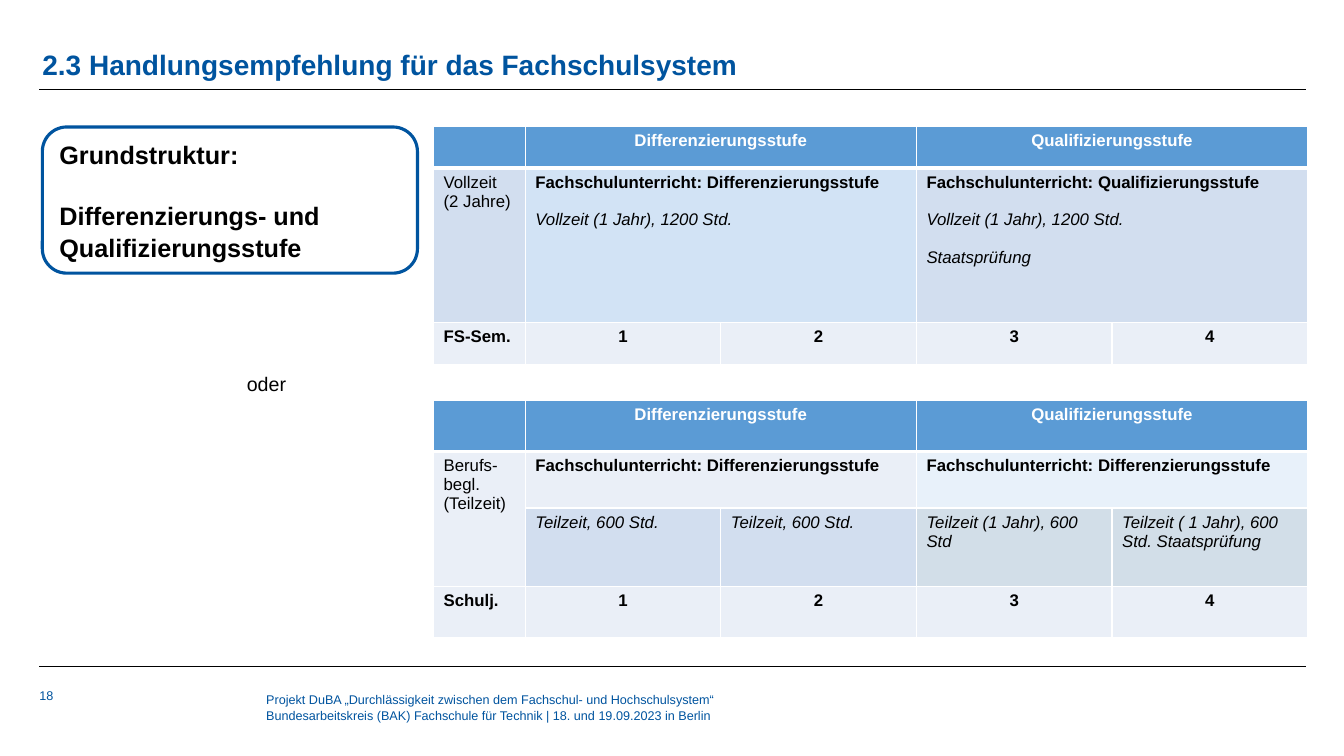
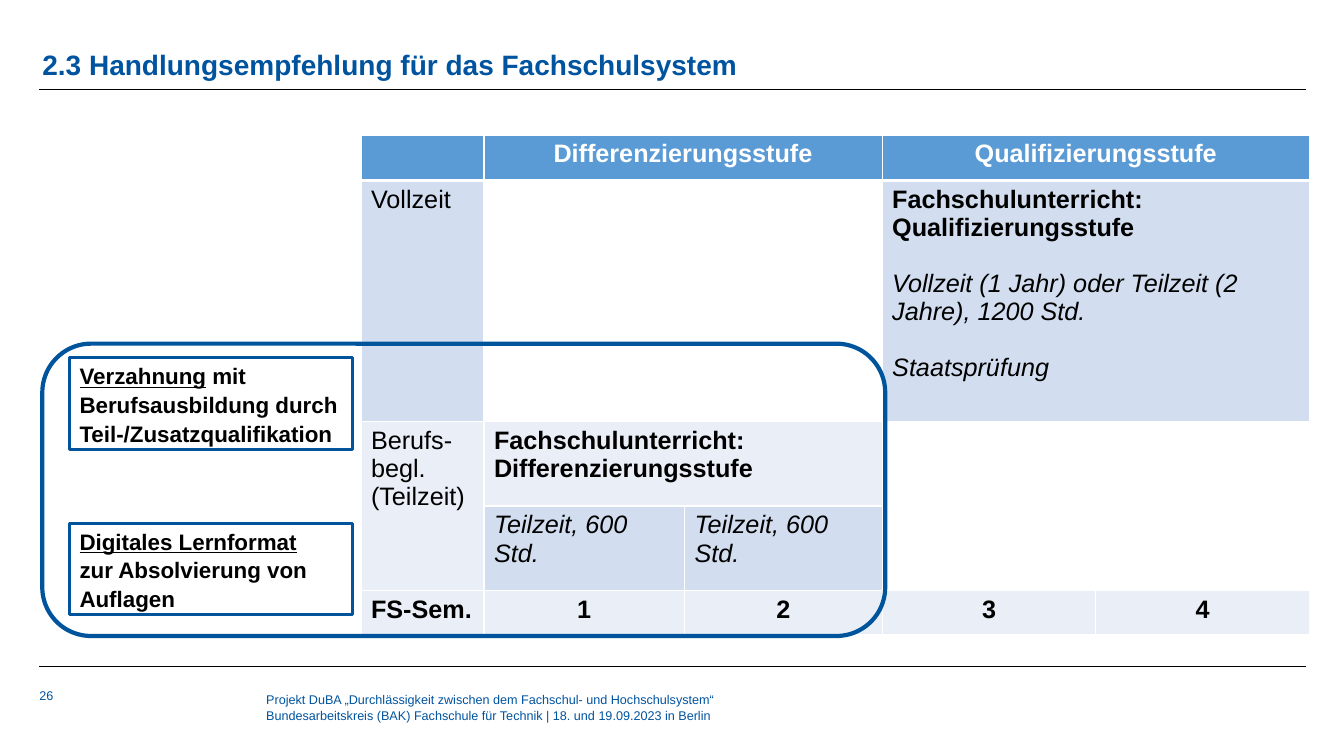
from dataclasses import dataclass

from lxml.etree import SubElement
from pptx import Presentation
from pptx.dml.color import RGBColor
from pptx.enum.shapes import MSO_CONNECTOR, MSO_SHAPE
from pptx.enum.text import MSO_ANCHOR, PP_ALIGN
from pptx.oxml.ns import qn
from pptx.util import Inches, Pt


@dataclass(frozen=True)
class Theme:
    font: str = "Arial"
    blue: str = "00549F"
    frame: str = "00549C"
    black: str = "000000"
    white: str = "FFFFFF"
    head: str = "5B9BD5"
    mid: str = "D2DEEF"
    sky: str = "D2E3F5"
    pale: str = "EAEFF7"
    ice: str = "E8F1FA"
    grey: str = "D2DEE8"
    title: int = 20
    large: int = 18
    note: int = 16
    body: int = 14
    small: int = 12
    foot: int = 9
    lead: float = 1.07
    gap: float = 1.1


@dataclass(frozen=True)
class Para:
    text: str
    bold: bool = False
    italic: bool = False
    gap: bool = False


@dataclass(frozen=True)
class Cell:
    row: int
    col: int
    paras: tuple
    fill: str
    rows: int = 1
    cols: int = 1
    color: str = "000000"
    align: PP_ALIGN = PP_ALIGN.LEFT


THEME = Theme()
TITLE = "2.3 Handlungsempfehlung für das Fachschulsystem"
FOOTER = ("Projekt DuBA „Durchlässigkeit zwischen dem Fachschul- und Hochschulsystem“ "
          "Bundesarbeitskreis (BAK) Fachschule für Technik | 18. und 19.09.2023 in Berlin")
STAGES = ("Differenzierungsstufe", "Qualifizierungsstufe")
PLAIN_STYLE = "{2D5ABB26-0587-4C30-8999-92F81FD0307C}"


def rgb(code):
    return RGBColor.from_string(code)


def style(para, size, color=THEME.black, bold=False, italic=False):
    font = para.font
    font.name, font.size = THEME.font, Pt(size)
    font.bold, font.italic = bold, italic
    font.color.rgb = rgb(color)


def fill_text(frame, paras, size, color=THEME.black, align=PP_ALIGN.LEFT, lead=None):
    for num, item in enumerate(paras):
        para = frame.add_paragraph() if num else frame.paragraphs[0]
        para.text, para.alignment = item.text, align
        if lead:
            para.line_spacing = lead
        if item.gap:
            para.space_before = Pt(round(size * THEME.gap, 1))
        style(para, size, color, item.bold, item.italic)


def add_text(slide, box, para, size, color=THEME.black, inset=True, lead=THEME.lead):
    frame = slide.shapes.add_textbox(*map(Inches, box)).text_frame
    frame.word_wrap = True
    if not inset:
        frame.margin_left = frame.margin_right = 0
        frame.margin_top = frame.margin_bottom = 0
    fill_text(frame, [para], size, color, lead=lead)
    return frame


def add_rule(slide, top):
    line = slide.shapes.add_connector(
        MSO_CONNECTOR.STRAIGHT, Inches(0.39), Inches(top), Inches(12.95), Inches(top))
    line.line.color.rgb = rgb(THEME.black)
    line.line.width = Pt(0.5)
    SubElement(line._element.spPr, qn("a:effectLst"))


def add_page(deck, number):
    """Add a slide with the shared title, rules and footer."""
    slide = deck.slides.add_slide(deck.slide_layouts[6])
    add_text(slide, (2.64, 6.85, 4.49, 0.61), Para(FOOTER), THEME.foot, THEME.blue, False)
    for top in (0.89, 6.61):
        add_rule(slide, top)
    add_text(slide, (0.39, 6.81, 0.8, 0.43), Para(str(number)), THEME.foot,
             THEME.blue, False)
    frame = add_text(slide, (0.42, 0.22, 12.56, 0.59), Para(TITLE, bold=True),
                     THEME.title, THEME.blue, False, 0.9)
    frame.vertical_anchor = MSO_ANCHOR.BOTTOM
    return slide


def add_frame(slide, box, kind, color, width):
    """Add an unfilled outline shape and return its text frame."""
    shape = slide.shapes.add_shape(kind, *map(Inches, box))
    shape.shadow.inherit = False
    shape.fill.background()
    shape.line.color.rgb = rgb(color)
    shape.line.width = Pt(width)
    shape.text_frame.word_wrap = True
    return shape.text_frame


def add_note(slide, box, lines):
    """Add a bordered note; each line is a list of (text, underlined) runs."""
    frame = add_frame(slide, box, MSO_SHAPE.RECTANGLE, THEME.frame, 2.25)
    for num, parts in enumerate(lines):
        para = frame.add_paragraph() if num else frame.paragraphs[0]
        para.alignment, para.line_spacing = PP_ALIGN.LEFT, THEME.lead
        style(para, THEME.note, bold=True)
        for text, under in parts:
            run = para.add_run()
            run.text, run.font.underline = text, under


def add_edges(cell, row):
    """Draw white borders, with a thick line below the head row."""
    thick = {0: "lnB", 1: "lnT"}.get(row)
    props = cell._tc.get_or_add_tcPr()
    for side in ("lnL", "lnR", "lnT", "lnB"):
        edge = SubElement(props, qn("a:" + side), w=str(Pt(3 if side == thick else 1)))
        paint = SubElement(edge, qn("a:solidFill"))
        SubElement(paint, qn("a:srgbClr"), val=THEME.white)


def head_row():
    yield Cell(0, 0, (), THEME.head)
    for num, stage in enumerate(STAGES):
        yield Cell(0, 1 + 2 * num, (Para(stage, bold=True),), THEME.head, cols=2,
                   color=THEME.white, align=PP_ALIGN.CENTER)


def count_row(row, label):
    yield Cell(row, 0, (Para(label, bold=True),), THEME.pale)
    for num in range(1, 5):
        yield Cell(row, num, (Para(str(num), bold=True),), THEME.pale,
                   align=PP_ALIGN.CENTER)


def add_plan(slide, left, top, widths, heights, size, label, body):
    """Add a course table: head row, body cells, then the numbered last row."""
    box = (left, top, sum(widths), sum(heights))
    table = slide.shapes.add_table(
        len(heights), len(widths), *map(Inches, box)).table
    table.first_row = table.horz_banding = False
    table._tbl.tblPr.find(qn("a:tableStyleId")).text = PLAIN_STYLE
    for col, width in zip(table.columns, widths):
        col.width = Inches(width)
    for num, (row, height) in enumerate(zip(table.rows, heights)):
        row.height = Inches(height)
        for cell in row.cells:
            add_edges(cell, num)
            cell.fill.background()
    for item in (*head_row(), *body, *count_row(len(heights) - 1, label)):
        cell = table.cell(item.row, item.col)
        if item.rows * item.cols > 1:
            cell.merge(table.cell(item.row + item.rows - 1, item.col + item.cols - 1))
        if item.fill:
            cell.fill.solid()
            cell.fill.fore_color.rgb = rgb(item.fill)
        fill_text(cell.text_frame, item.paras, size, item.color, item.align)


def lesson(stage, *notes):
    """Return a bold lesson heading followed by spaced italic notes."""
    return (Para("Fachschulunterricht: " + stage, bold=True),
            *(Para(note, italic=True, gap=True) for note in notes))


def hours(row, texts, fills):
    for num, (text, fill) in enumerate(zip(texts, fills), 1):
        yield Cell(row, num, (Para(text, italic=True),), fill)


def part_time(row):
    return Cell(row, 0, (Para("Berufs-begl."), Para("(Teilzeit)")), THEME.pale, rows=2)


def build_basis(deck):
    slide = add_page(deck, 18)
    frame = add_frame(slide, (0.42, 1.26, 3.72, 1.45), MSO_SHAPE.ROUNDED_RECTANGLE,
                      THEME.blue, 2.25)
    fill_text(frame, (Para("Grundstruktur:", bold=True),
                      Para("Differenzierungs- und Qualifizierungsstufe",
                           bold=True, gap=True)), THEME.large, lead=THEME.lead)
    left, widths = 4.3, [0.91] + [1.94] * 4
    full = "Vollzeit (1 Jahr), 1200 Std."
    add_plan(slide, left, 1.25, widths, [0.42, 1.53, 0.42], THEME.small, "FS-Sem.", (
        Cell(1, 0, (Para("Vollzeit"), Para("(2 Jahre)")), THEME.mid),
        Cell(1, 1, lesson(STAGES[0], full), THEME.sky, cols=2),
        Cell(1, 3, lesson(STAGES[1], full, "Staatsprüfung"), THEME.mid, cols=2)))
    texts = ["Teilzeit, 600 Std."] * 2 + [
        "Teilzeit (1 Jahr), 600 Std", "Teilzeit ( 1 Jahr), 600 Std. Staatsprüfung"]
    add_plan(slide, left, 3.97, widths, [0.51, 0.56, 0.78, 0.51], THEME.small, "Schulj.", (
        part_time(1),
        Cell(1, 1, lesson(STAGES[0]), THEME.pale, cols=2),
        Cell(1, 3, lesson(STAGES[0]), THEME.ice, cols=2),
        *hours(2, texts, [THEME.mid] * 2 + [THEME.grey] * 2)))
    add_text(slide, (2.35, 3.62, 1.24, 0.34), Para("oder"), THEME.body)


def build_link(deck):
    slide = add_page(deck, 26)
    add_plan(slide, 3.58, 1.34, [1.22, 1.99, 1.96, 2.12, 2.12],
             [0.45, 2.39, 0.84, 0.84, 0.44], THEME.large, "FS-Sem.", (
        Cell(1, 0, (Para("Vollzeit"),), THEME.mid),
        Cell(1, 1, (), "", cols=2),
        Cell(1, 3, lesson(STAGES[1], "Vollzeit (1 Jahr) oder Teilzeit (2 Jahre), 1200 Std.",
                          "Staatsprüfung"), THEME.mid, cols=2),
        part_time(2),
        Cell(2, 1, lesson(STAGES[0]), THEME.pale, cols=2),
        Cell(2, 3, (), "", cols=2),
        *hours(3, ["Teilzeit, 600 Std."] * 2, [THEME.mid] * 2)))
    notes = (
        (3.55, [[("Verzahnung", True),
                 (" mit Berufsausbildung durch Teil-/Zusatzqualifikation", False)]]),
        (5.19, [[("Digitales Lernformat", True)],
                [("zur Absolvierung von Auflagen", False)]]))
    for top, lines in notes:
        add_note(slide, (0.69, top, 2.81, 0.91), lines)
    add_frame(slide, (0.42, 3.41, 8.36, 2.9), MSO_SHAPE.ROUNDED_RECTANGLE, THEME.frame, 3)


def main():
    deck = Presentation()
    deck.slide_width, deck.slide_height = Inches(13.33), Inches(7.5)
    build_basis(deck)
    build_link(deck)
    deck.save("out.pptx")


if __name__ == "__main__":
    main()
